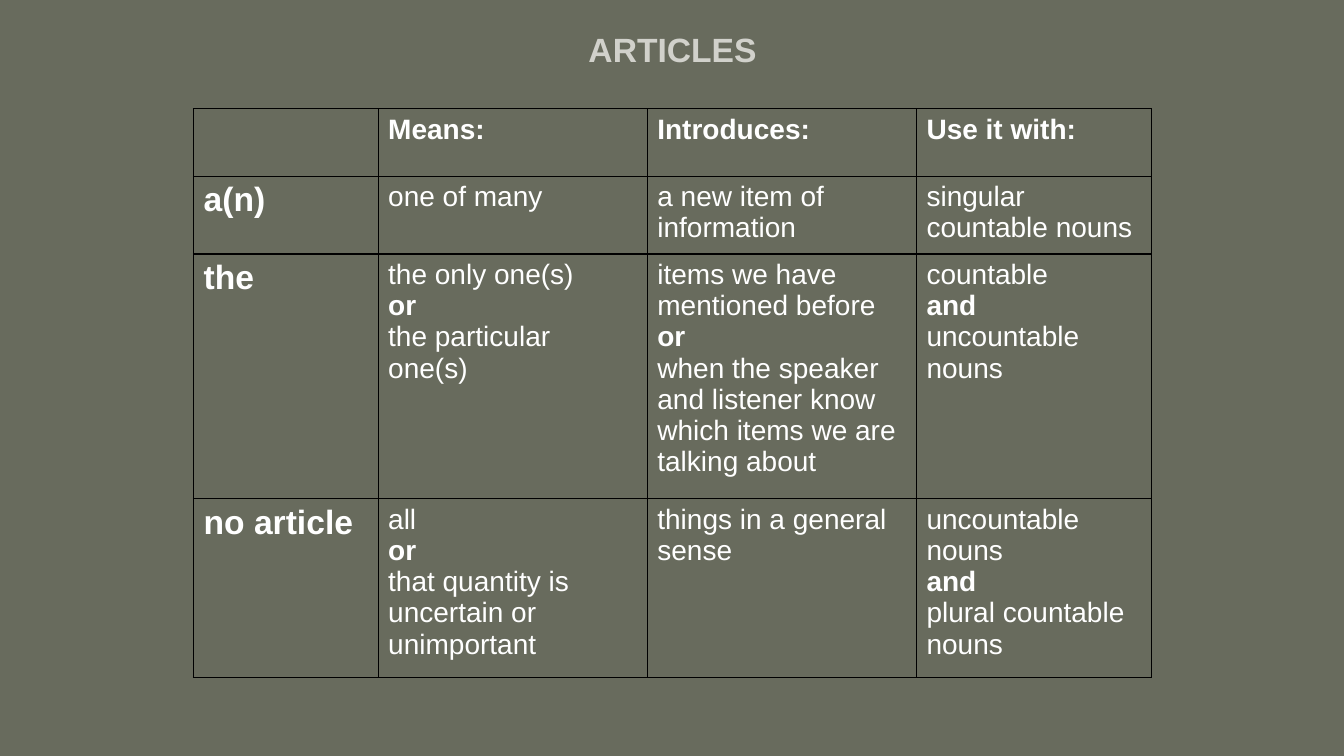
from lxml.etree import SubElement
from pptx import Presentation
from pptx.dml.color import RGBColor
from pptx.enum.text import MSO_ANCHOR, PP_ALIGN
from pptx.oxml.ns import qn
from pptx.util import Inches, Pt

FONT = "Arial"
BACKGROUND, TITLE_COLOR, TEXT_COLOR, BORDER_COLOR = "686B5D", "D1D1CB", "FFFFFF", "000000"
HANGING_INDENT = Inches(0.38)
COLUMN_WIDTHS = [1.83, 2.67, 2.67, 2.33]
ROW_HEIGHTS = [0.67, 0.77, 2.43, 1.77]
BOLD_WORDS = {"or", "and"}

# Each line of a cell is a paragraph of its own
ARTICLE_ROWS = [
    ["", "Means:", "Introduces:", "Use it with:"],
    ["a(n)", "one of many", "a new item of\ninformation", "singular\ncountable nouns"],
    ["the",
     "the only one(s)\nor\nthe particular\none(s)",
     "items we have\nmentioned before\nor\nwhen the speaker\nand listener know\n"
     "which items we are\ntalking about",
     "countable\nand\nuncountable\nnouns"],
    ["no article",
     "all\nor\nthat quantity is\nuncertain or\nunimportant",
     "things in a general\nsense",
     "uncountable\nnouns\nand\nplural countable\nnouns"],
]


def color(hex_string):
    return RGBColor.from_string(hex_string)


def set_font(paragraph, size, hex_string, bold):
    font = paragraph.font
    font.name, font.size, font.bold = FONT, Pt(size), bold
    font.color.rgb = color(hex_string)


def add_title(slide, text, left, top, width, height):
    title = slide.shapes.title
    title.left, title.top, title.width, title.height = map(Inches, (left, top, width, height))
    frame = title.text_frame
    frame.text = text
    frame.vertical_anchor = MSO_ANCHOR.MIDDLE
    frame.paragraphs[0].alignment = PP_ALIGN.CENTER
    set_font(frame.paragraphs[0], 24, TITLE_COLOR, True)


def set_borders(cell):
    properties = cell._tc.get_or_add_tcPr()
    for index, side in enumerate(("a:lnL", "a:lnR", "a:lnT", "a:lnB")):
        line = SubElement(properties, qn(side), w=str(Pt(1)))
        fill = SubElement(line, qn("a:solidFill"))
        SubElement(fill, qn("a:srgbClr"), val=BORDER_COLOR)
        # Borders come before the fill in the cell properties
        properties.insert(index, line)


def fill_cell(cell, text, is_header, is_label):
    cell.fill.background()
    set_borders(cell)
    cell.text = text
    for paragraph in cell.text_frame.paragraphs:
        bold = is_header or is_label or paragraph.text in BOLD_WORDS
        set_font(paragraph, 24 if is_label else 20, TEXT_COLOR, bold)
        properties = paragraph._p.get_or_add_pPr()
        properties.set("marL", str(HANGING_INDENT))
        properties.set("indent", str(-HANGING_INDENT))


def add_article_table(slide, left, top):
    size = sum(COLUMN_WIDTHS), sum(ROW_HEIGHTS)
    table = slide.shapes.add_table(len(ROW_HEIGHTS), len(COLUMN_WIDTHS),
                                   *map(Inches, (left, top, *size))).table
    table.first_row = table.horz_banding = False
    for column, width in zip(table.columns, COLUMN_WIDTHS):
        column.width = Inches(width)
    for row, height in zip(table.rows, ROW_HEIGHTS):
        row.height = Inches(height)
    for row_index, texts in enumerate(ARTICLE_ROWS):
        for column_index, text in enumerate(texts):
            fill_cell(table.cell(row_index, column_index), text,
                      row_index == 0, column_index == 0)


def main():
    presentation = Presentation()
    presentation.slide_width, presentation.slide_height = Inches(13.33), Inches(7.5)
    slide = presentation.slides.add_slide(presentation.slide_layouts[5])
    slide.background.fill.solid()
    slide.background.fill.fore_color.rgb = color(BACKGROUND)
    add_article_table(slide, 1.92, 1.08)
    add_title(slide, "ARTICLES", 2.17, 0.3, 9, 0.37)
    presentation.save("out.pptx")


if __name__ == "__main__":
    main()
